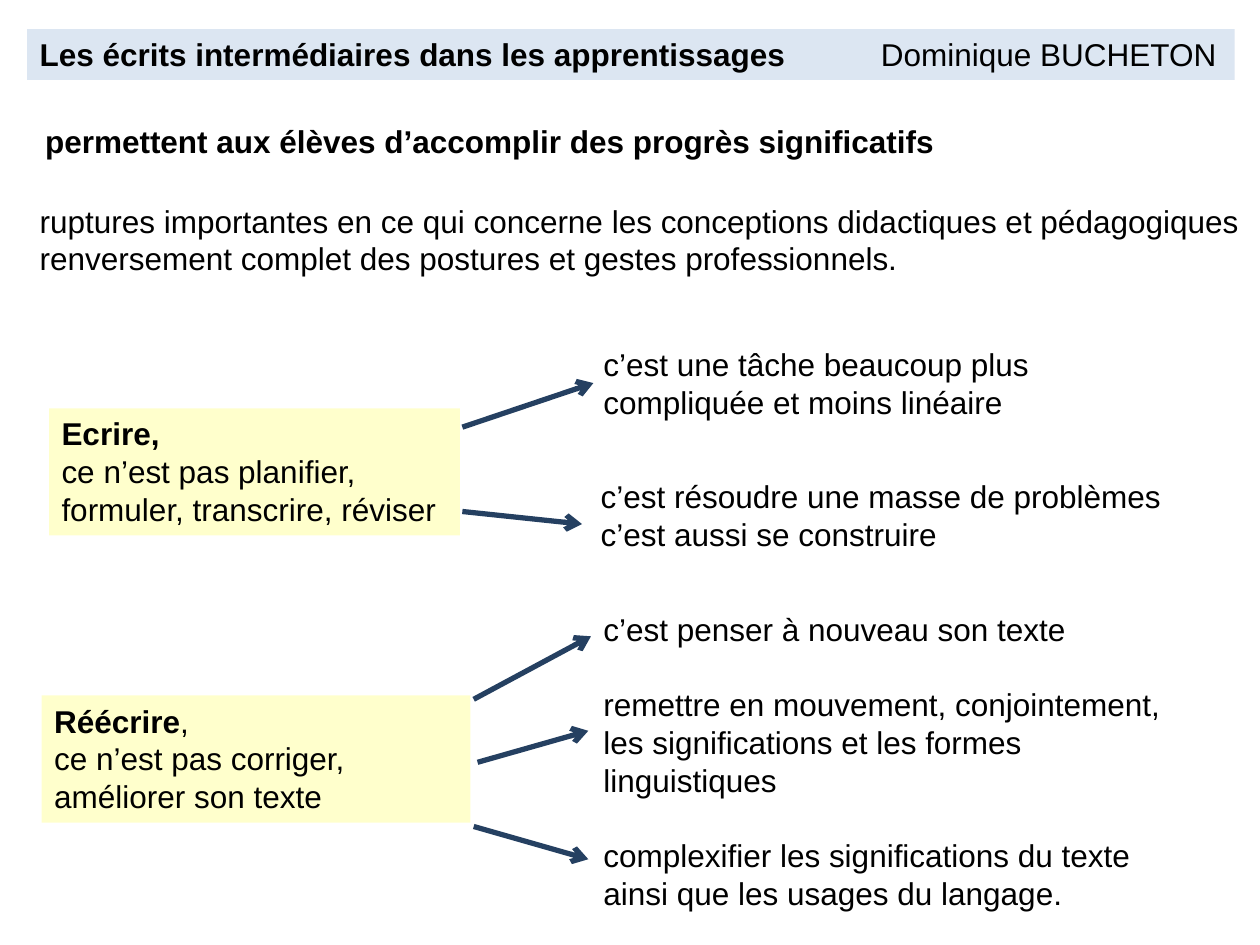
from dataclasses import dataclass

from lxml.etree import SubElement
from pptx import Presentation
from pptx.dml.color import RGBColor
from pptx.enum.shapes import MSO_CONNECTOR, MSO_SHAPE
from pptx.enum.text import MSO_ANCHOR, MSO_AUTO_SIZE, PP_ALIGN
from pptx.oxml.ns import qn
from pptx.util import Pt


@dataclass(frozen=True)
class Theme:
    font: str = "Arial"
    size: float = 18
    ink: str = "000000"
    banner: str = "DCE6F2"
    highlight: str = "FFFF00"
    highlight_opacity: int = 20
    arrow: str = "254061"
    arrow_width: float = 3
    blank_line: float = 21.5


def write_text(paragraph, text, *, theme, bold=False):
    run = paragraph.add_run()
    run.text = text
    run.font.name = theme.font
    run.font.size = Pt(theme.size)
    run.font.bold = bold
    run.font.color.rgb = RGBColor.from_string(theme.ink)


class SlideBuilder:
    def __init__(self, slide, theme):
        self.slide = slide
        self.theme = theme

    def fill_text(self, frame, paragraphs, gaps_before=()):
        """Write paragraphs, each a list of (text, bold); gaps_before holds indexes."""
        frame.word_wrap = True
        frame.auto_size = MSO_AUTO_SIZE.SHAPE_TO_FIT_TEXT
        frame.vertical_anchor = MSO_ANCHOR.TOP
        for index, runs in enumerate(paragraphs):
            paragraph = frame.add_paragraph() if index else frame.paragraphs[0]
            paragraph.alignment = PP_ALIGN.LEFT
            if index in gaps_before:
                paragraph.space_before = Pt(self.theme.blank_line)
            for text, bold in runs:
                write_text(paragraph, text, theme=self.theme, bold=bold)

    def text(self, box, lines, bold=False, gaps_before=()):
        label = self.slide.shapes.add_textbox(*map(Pt, box))
        self.fill_text(label.text_frame, [[(line, bold)] for line in lines], gaps_before)

    def panel(self, box, paragraphs, color, opacity=100):
        panel = self.slide.shapes.add_shape(MSO_SHAPE.RECTANGLE, *map(Pt, box))
        panel.shadow.inherit = False
        panel.line.fill.background()
        panel.fill.solid()
        panel.fill.fore_color.rgb = RGBColor.from_string(color)
        if opacity < 100:
            tint = panel.fill._xPr.find(qn("a:solidFill")).find(qn("a:srgbClr"))
            SubElement(tint, qn("a:alpha"), val=str(opacity * 1000))
        self.fill_text(panel.text_frame, paragraphs)
        return panel

    def banner(self, box, title, author, author_end):
        """Title at the left, author ending at a right tab stop."""
        banner = self.panel(box, [[(title, True), ("\t" + author, False)]], self.theme.banner)
        properties = banner.text_frame.paragraphs[0]._p.get_or_add_pPr()
        tabs = SubElement(properties, qn("a:tabLst"))
        SubElement(tabs, qn("a:tab"), pos=str(Pt(author_end)), algn="r")

    def arrow(self, start, end):
        arrow = self.slide.shapes.add_connector(
            MSO_CONNECTOR.STRAIGHT, *map(Pt, (*start, *end)))
        arrow.line.color.rgb = RGBColor.from_string(self.theme.arrow)
        arrow.line.width = Pt(self.theme.arrow_width)
        SubElement(arrow.line._get_or_add_ln(), qn("a:tailEnd"), type="arrow")
        SubElement(arrow._element.spPr, qn("a:effectLst"))


def main():
    presentation = Presentation()
    presentation.slide_width, presentation.slide_height = Pt(720), Pt(540)
    theme = Theme()
    builder = SlideBuilder(
        presentation.slides.add_slide(presentation.slide_layouts[6]), theme)

    builder.banner((15.6, 16.6, 690, 29),
                   "Les écrits intermédiaires dans les apprentissages",
                   "Dominique BUCHETON", author_end=672.5)
    builder.text((18.7, 66.2, 568, 29),
                 ["permettent aux élèves d’accomplir des progrès significatifs"], bold=True)
    builder.text((15.6, 111.6, 704.4, 51), [
        "ruptures importantes en ce qui concerne les conceptions didactiques et pédagogiques",
        "renversement complet des postures et gestes professionnels.",
    ])

    activities = [
        ((23.8, 397.4, 245, 72.7), [
            [("Réécrire", True), (",", False)],
            [("ce n’est pas corriger, améliorer son texte", False)]]),
        ((28.1, 233.3, 234.7, 72.7), [
            [("Ecrire,", True)],
            [("ce n’est pas planifier, formuler, transcrire, réviser", False)]]),
    ]
    for box, paragraphs in activities:
        builder.panel(box, paragraphs, theme.highlight, theme.highlight_opacity)

    builder.text((337.7, 193.7, 345.6, 51),
                 ["c’est une tâche beaucoup plus compliquée et moins linéaire"])
    builder.text((336.2, 269.3, 360, 51),
                 ["c’est résoudre une masse de problèmes", "c’est aussi se construire"])
    builder.text((337.7, 344.9, 342, 181.4), [
        "c’est penser à nouveau son texte",
        "remettre en mouvement, conjointement,",
        "les significations et les formes linguistiques",
        "complexifier les significations du texte",
        "ainsi que les usages du langage.",
    ], gaps_before=(1, 3))

    arrows = [
        ((264.2, 244.1), (339.1, 218.9)),
        ((264.2, 292.3), (332.6, 299.5)),
        ((270.7, 399.6), (337.7, 363.6)),
        ((272.9, 435.6), (336.2, 417.6)),
        ((270.7, 472.3), (336.2, 491)),
    ]
    for start, end in arrows:
        builder.arrow(start, end)

    presentation.save("out.pptx")


if __name__ == "__main__":
    main()
